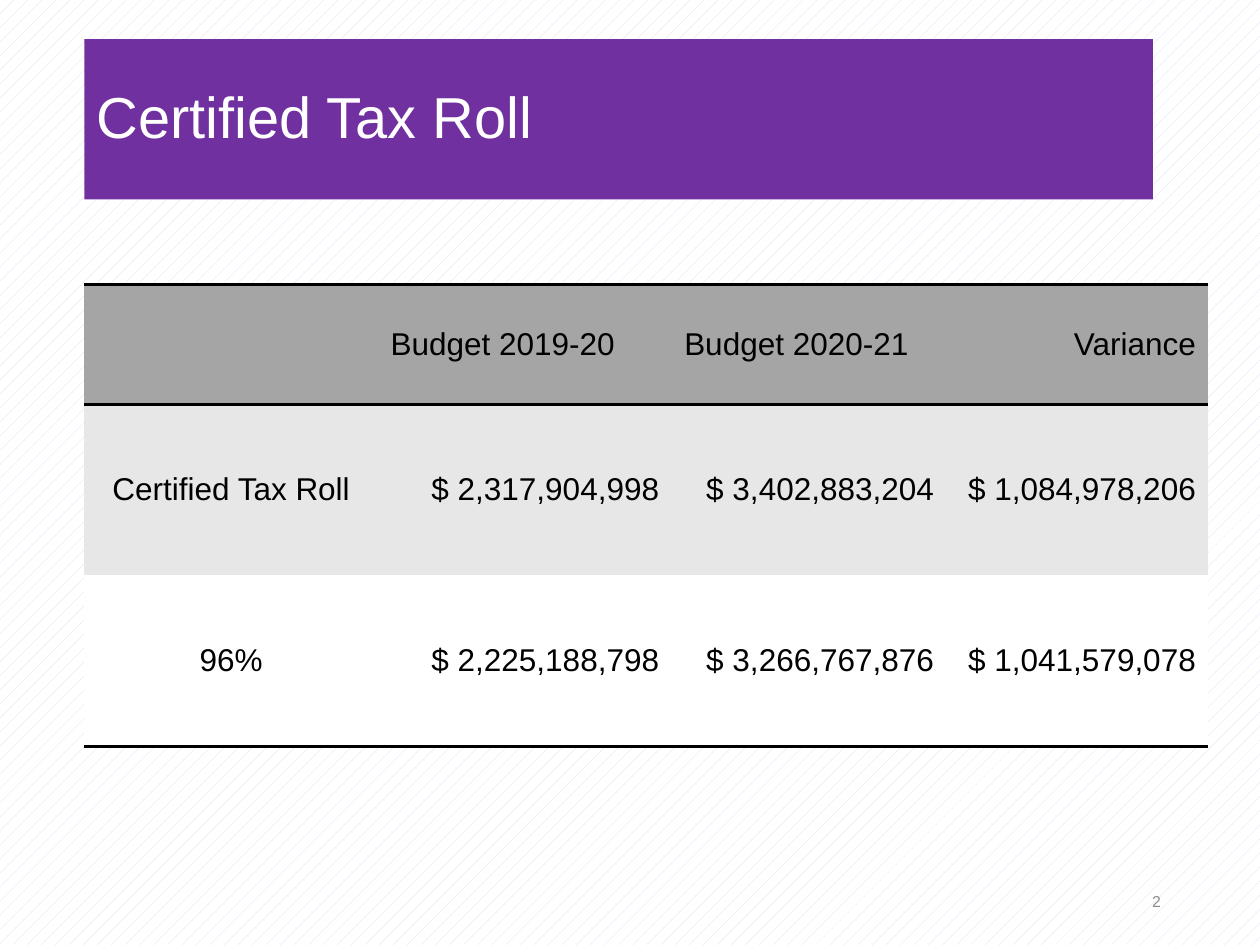
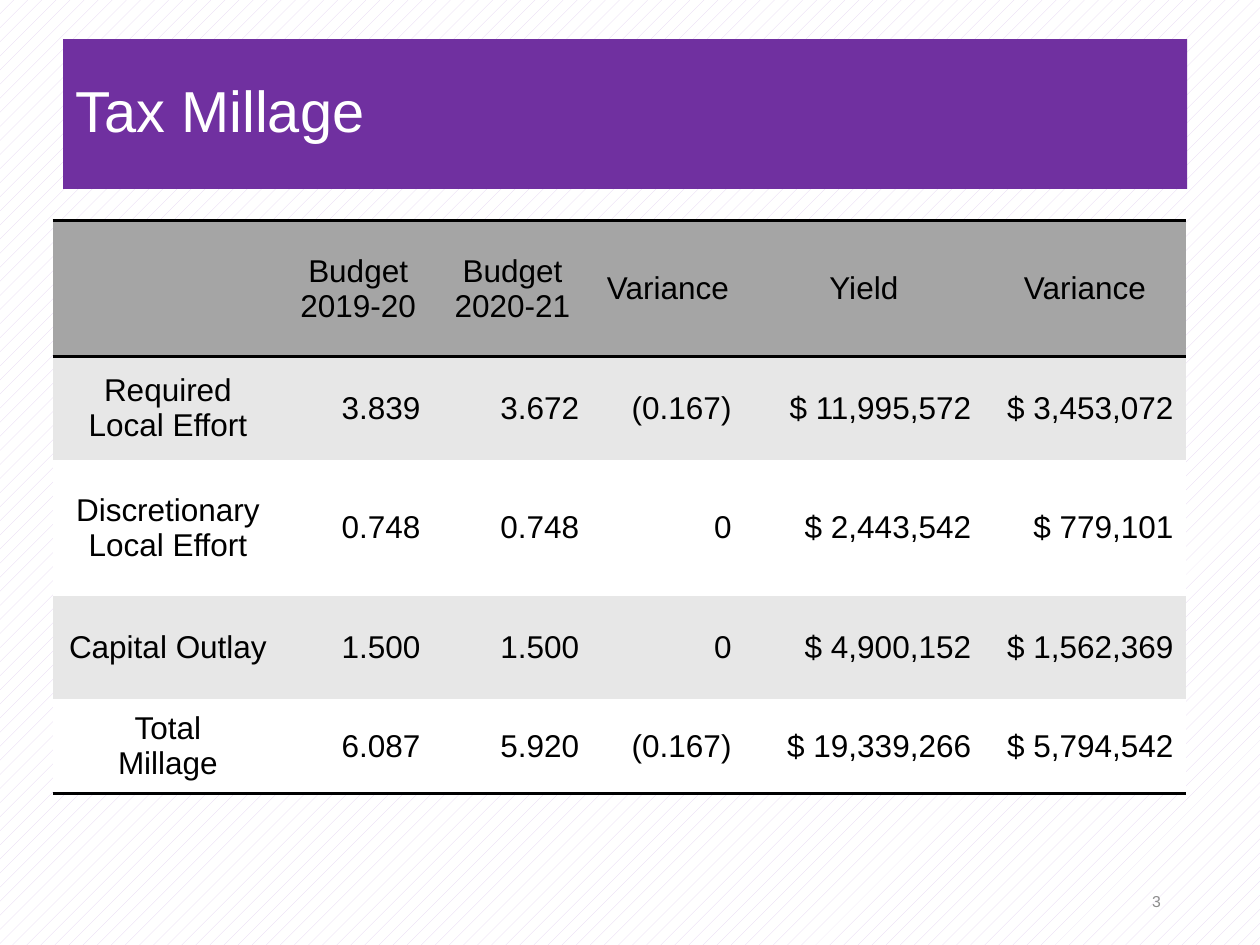
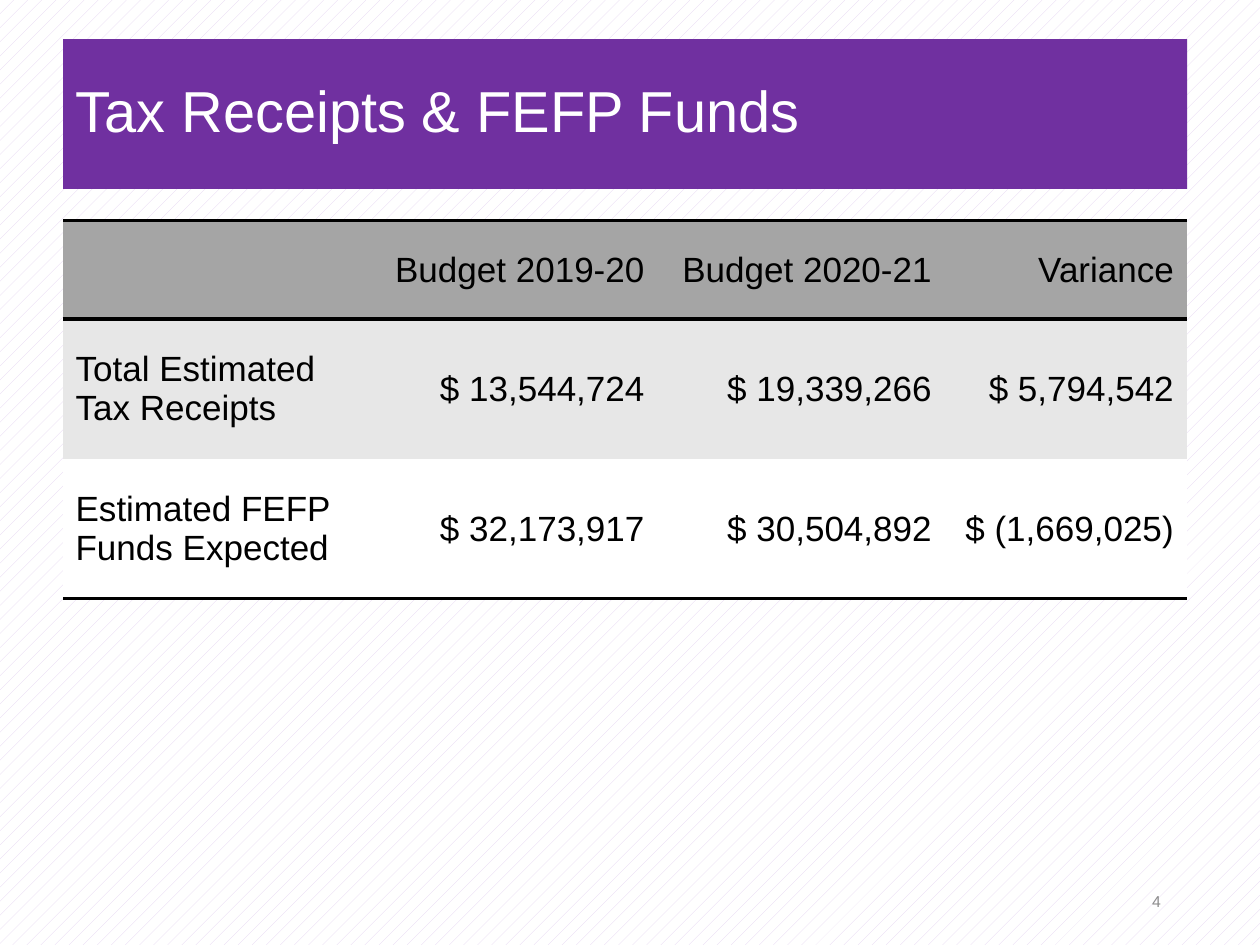
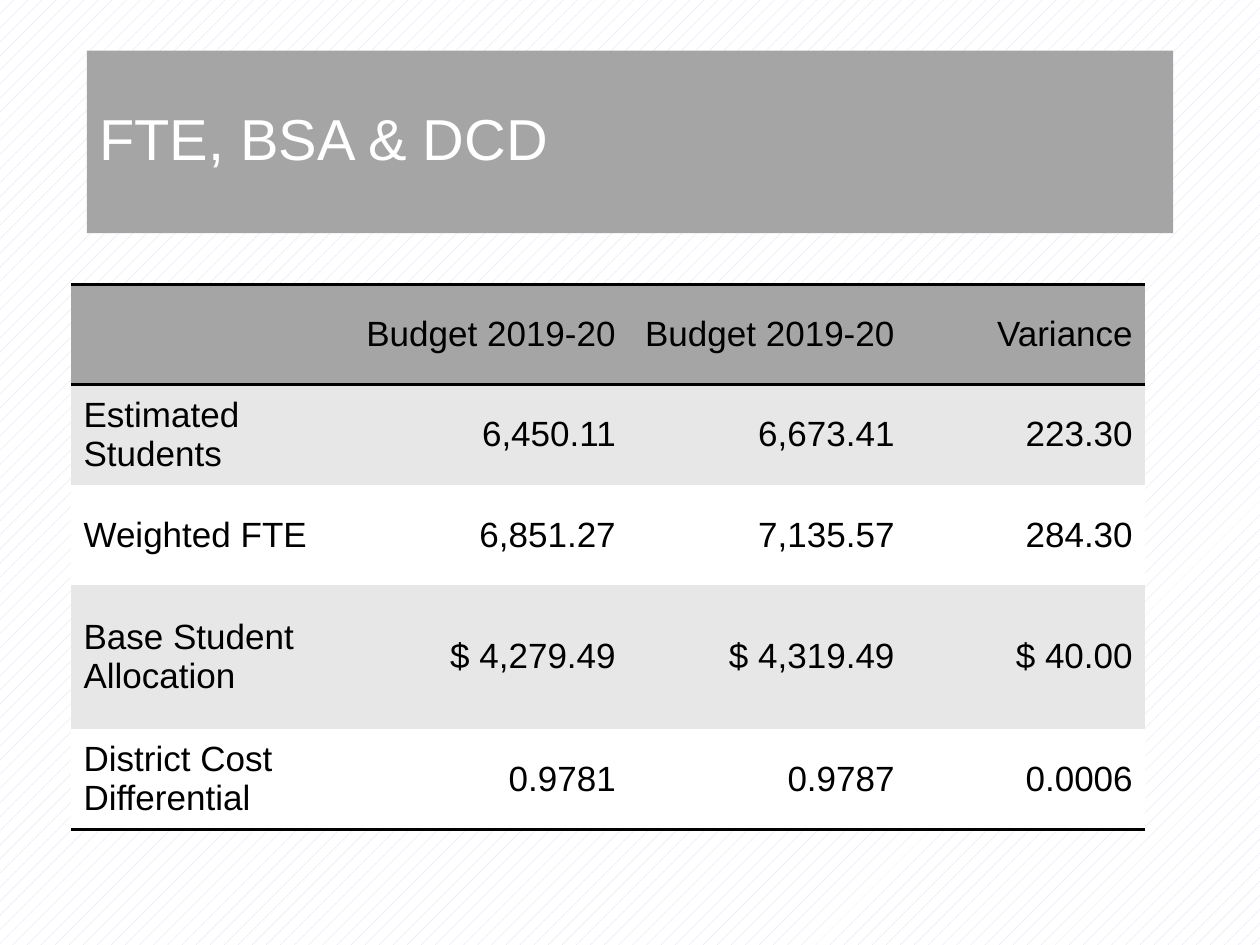
"""Builds four budget slides, each with a title band, a table and a page number."""
import dataclasses

import lxml.etree
import pptx
import pptx.dml.color
import pptx.enum.dml
import pptx.enum.text
import pptx.oxml.ns
import pptx.util

Cm = pptx.util.Cm
Align = pptx.enum.text.PP_ALIGN
Middle = pptx.enum.text.MSO_ANCHOR.MIDDLE


@dataclasses.dataclass(frozen=True)
class Theme:
    font: str = "Arial"
    purple: str = "7030A0"
    gray: str = "A5A5A5"
    band: str = "E7E7E7"
    white: str = "FFFFFF"
    black: str = "000000"
    number: str = "8C8C8C"
    pattern: str = "E3D1F1"
    title_size: int = 33
    number_size: int = 9
    rule_width: int = 2
    plain_table: str = "{2D5ABB26-0587-4C30-8999-92F81FD0307C}"


def color(value):
    return pptx.dml.color.RGBColor.from_string(value)


def fill_solid(fill, value):
    fill.solid()
    fill.fore_color.rgb = color(value)


class Deck:
    def __init__(self, theme):
        self.theme = theme
        self.presentation = pptx.Presentation()
        self.presentation.slide_width = Cm(25.4)
        self.presentation.slide_height = Cm(19.05)
        self.slide = None
        fill = self.presentation.slide_master.background.fill
        fill.patterned()
        fill.pattern = pptx.enum.dml.MSO_PATTERN.PERCENT_10
        fill.fore_color.rgb = color(theme.pattern)
        fill.back_color.rgb = color(theme.white)

    def add_slide(self):
        layout = self.presentation.slide_layouts.get_by_name("Title Only")
        self.slide = self.presentation.slides.add_slide(layout)

    def set_text(self, text_frame, text, size, text_color, alignment):
        text_frame.text = text
        for paragraph in text_frame.paragraphs:
            paragraph.alignment = alignment
            paragraph.font.name = self.theme.font
            paragraph.font.size = pptx.util.Pt(size)
            paragraph.font.color.rgb = color(text_color)

    def title(self, text, box, fill):
        shape = self.slide.shapes.title
        shape.left, shape.top, shape.width, shape.height = map(Cm, box)
        fill_solid(shape.fill, fill)
        frame = shape.text_frame
        frame.auto_size = pptx.enum.text.MSO_AUTO_SIZE.NONE
        frame.vertical_anchor = Middle
        self.set_text(frame, text, self.theme.title_size, self.theme.white, Align.LEFT)
        frame.paragraphs[0].line_spacing = 0.9

    def page_number(self, number):
        box = self.slide.shapes.add_textbox(Cm(17.93), Cm(17.65), Cm(5.72), Cm(1.02))
        frame = box.text_frame
        frame.word_wrap = True
        frame.vertical_anchor = Middle
        self.set_text(frame, str(number), self.theme.number_size, self.theme.number, Align.RIGHT)

    def rule(self, cell, side):
        qn = pptx.oxml.ns.qn
        properties = cell._tc.get_or_add_tcPr()
        width = str(pptx.util.Pt(self.theme.rule_width))
        line = lxml.etree.SubElement(properties, qn(f"a:ln{side}"), w=width)
        solid = lxml.etree.SubElement(line, qn("a:solidFill"))
        lxml.etree.SubElement(solid, qn("a:srgbClr"), val=self.theme.black)

    def table(self, position, widths, heights, rows, size, header_align, label_align):
        left, top = map(Cm, position)
        frame = self.slide.shapes.add_table(
            len(rows), len(widths), left, top, Cm(sum(widths)), Cm(sum(heights)))
        table = frame.table
        style = table._tbl.tblPr.find(pptx.oxml.ns.qn("a:tableStyleId"))
        style.text = self.theme.plain_table
        for column, width in zip(table.columns, widths):
            column.width = Cm(width)
        for row, height in zip(table.rows, heights):
            row.height = Cm(height)
        body_align = [label_align] + [Align.RIGHT] * (len(widths) - 1)
        for row_index, values in enumerate(rows):
            is_header = row_index == 0
            is_last = row_index == len(rows) - 1
            fill = self.theme.band if row_index % 2 else self.theme.white
            alignments = header_align if is_header else body_align
            for column_index, text in enumerate(values):
                cell = table.cell(row_index, column_index)
                if is_header:
                    self.rule(cell, "T")
                if is_header or is_last:
                    self.rule(cell, "B")
                fill_solid(cell.fill, self.theme.gray if is_header else fill)
                cell.vertical_anchor = Middle
                self.set_text(cell.text_frame, text, size, self.theme.black,
                              alignments[column_index])


def main():
    theme = Theme()
    deck = Deck(theme)
    wide_band = (1.27, 0.79, 22.66, 3.02)

    deck.add_slide()
    deck.title("Certified Tax Roll", (1.7, 0.79, 21.54, 3.23), theme.purple)
    deck.table(
        (1.7, 5.74), (5.92, 5.92, 5.54, 5.28), (2.41, 3.45, 3.45),
        [("", "Budget 2019-20", "Budget 2020-21", "Variance"),
         ("Certified Tax Roll", "$ 2,317,904,998", "$ 3,402,883,204", "$ 1,084,978,206"),
         ("96%", "$ 2,225,188,798", "$ 3,266,767,876", "$ 1,041,579,078")],
        18, [Align.LEFT] * 3 + [Align.RIGHT], Align.CENTER)
    deck.page_number(2)

    deck.add_slide()
    deck.title("Tax Millage", wide_band, theme.purple)
    deck.table(
        (1.06, 4.45), (4.65, 3.02, 3.2, 3.07, 4.83, 4.08), (2.74, 2.08, 2.74, 2.08, 1.91),
        [("", "Budget 2019-20", "Budget 2020-21", "Variance", "Yield", "Variance"),
         ("Required Local Effort", "3.839", "3.672", "(0.167)", "$ 11,995,572", "$ 3,453,072"),
         ("Discretionary Local Effort", "0.748", "0.748", "0", "$ 2,443,542", "$ 779,101"),
         ("Capital Outlay", "1.500", "1.500", "0", "$ 4,900,152", "$ 1,562,369"),
         ("Total\nMillage", "6.087", "5.920", "(0.167)", "$ 19,339,266", "$ 5,794,542")],
        18, [Align.CENTER] * 6, Align.CENTER)
    deck.page_number(3)

    deck.add_slide()
    deck.title("Tax Receipts & FEFP Funds", wide_band, theme.purple)
    deck.table(
        (1.27, 4.45), (5.99, 5.99, 5.79, 4.88), (1.98, 2.82, 2.82),
        [("", "Budget 2019-20", "Budget 2020-21", "Variance"),
         ("Total Estimated Tax Receipts", "$ 13,544,724", "$ 19,339,266", "$ 5,794,542"),
         ("Estimated FEFP Funds Expected", "$ 32,173,917", "$ 30,504,892", "$ (1,669,025)")],
        20, [Align.RIGHT] * 4, Align.LEFT)
    deck.page_number(4)

    deck.add_slide()
    deck.title("FTE, BSA & DCD", (1.75, 1.02, 21.9, 3.68), theme.gray)
    deck.table(
        (1.43, 5.74), (5.62, 5.62, 5.62, 4.8), (2.01, 2.03, 2.01, 2.9, 2.03),
        [("", "Budget 2019-20", "Budget 2019-20", "Variance"),
         ("Estimated Students", "6,450.11", "6,673.41", "223.30"),
         ("Weighted FTE", "6,851.27", "7,135.57", "284.30"),
         ("Base Student Allocation", "$ 4,279.49", "$ 4,319.49", "$ 40.00"),
         ("District Cost Differential", "0.9781", "0.9787", "0.0006")],
        20, [Align.RIGHT] * 4, Align.LEFT)

    deck.presentation.save("out.pptx")


if __name__ == "__main__":
    main()
